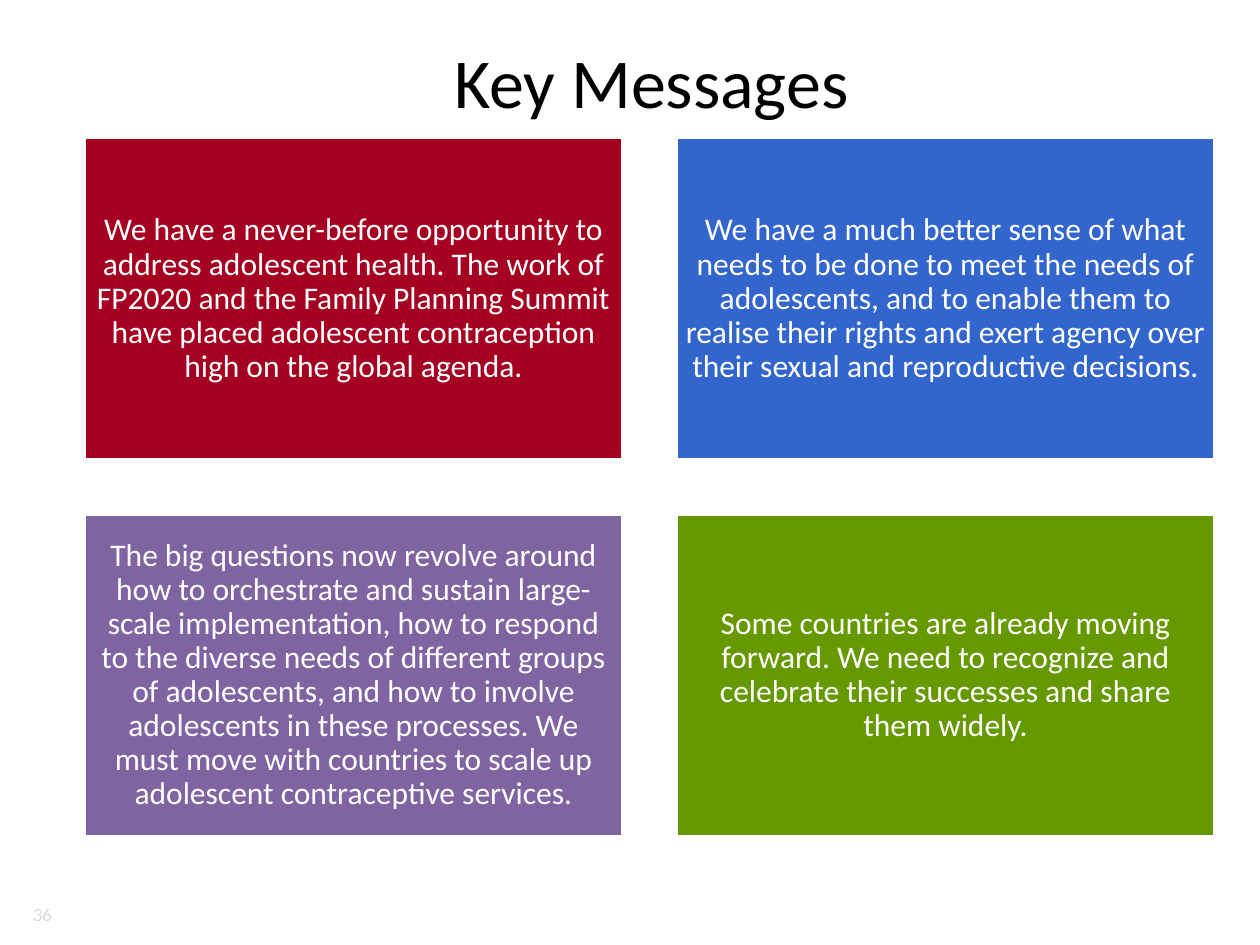
from dataclasses import dataclass

from pptx import Presentation
from pptx.dml.color import RGBColor
from pptx.enum.shapes import MSO_SHAPE as Shape
from pptx.enum.text import MSO_ANCHOR as Anchor, PP_ALIGN as Align
from pptx.util import Pt


@dataclass(frozen=True)
class Theme:
    font: str = "Calibri"
    title_size: float = 40
    card_size: float = 18
    number_size: float = 10.5
    black: str = "000000"
    white: str = "FFFFFF"
    grey: str = "D9D9D9"
    red: str = "A50021"
    blue: str = "3366CC"
    purple: str = "8064A2"
    green: str = "669900"


class SlideBuilder:
    """Draws styled elements on one slide, with lengths in points."""

    def __init__(self, slide, theme):
        self.slide = slide
        self.theme = theme

    def set_text(self, shape, text, size, color, align):
        frame = shape.text_frame
        frame.word_wrap = True
        frame.vertical_anchor = Anchor.MIDDLE
        paragraph = frame.paragraphs[0]
        paragraph.text = text
        paragraph.alignment = align
        font = paragraph.font
        font.name = self.theme.font
        font.size = Pt(size)
        font.color.rgb = RGBColor.from_string(color)
        return paragraph

    def title(self, text, left, top, width, height):
        shape = self.slide.shapes.title
        shape.left, shape.top = Pt(left), Pt(top)
        shape.width, shape.height = Pt(width), Pt(height)
        self.set_text(shape, text, self.theme.title_size, self.theme.black, Align.CENTER)

    def card(self, text, color, left, top, width, height):
        shape = self.slide.shapes.add_shape(
            Shape.RECTANGLE, Pt(left), Pt(top), Pt(width), Pt(height))
        shape.shadow.inherit = False
        shape.fill.solid()
        shape.fill.fore_color.rgb = RGBColor.from_string(color)
        shape.line.color.rgb = RGBColor.from_string(self.theme.white)
        shape.line.width = Pt(2)
        frame = shape.text_frame
        frame.margin_left = frame.margin_right = Pt(5)
        frame.margin_top = frame.margin_bottom = Pt(5)
        paragraph = self.set_text(
            shape, text, self.theme.card_size, self.theme.white, Align.CENTER)
        paragraph.line_spacing = 0.9

    def number(self, text, left, top, width, height):
        shape = self.slide.shapes.add_textbox(Pt(left), Pt(top), Pt(width), Pt(height))
        self.set_text(shape, text, self.theme.number_size, self.theme.grey, Align.RIGHT)


def main():
    theme = Theme()
    presentation = Presentation()
    presentation.slide_width, presentation.slide_height = Pt(720), Pt(540)
    slide = presentation.slides.add_slide(presentation.slide_layouts[5])
    builder = SlideBuilder(slide, theme)

    messages = [
        ("We have a never-before opportunity to address adolescent health. "
         "The work of FP2020 and the Family Planning Summit have placed "
         "adolescent contraception high on the global agenda.", theme.red),
        ("We have a much better sense of what needs to be done to meet the needs "
         "of adolescents, and to enable them to realise their rights and exert "
         "agency over their sexual and reproductive decisions.", theme.blue),
        ("The big questions now revolve around how to orchestrate and sustain "
         "large-scale implementation, how to respond to the diverse needs of "
         "different groups of adolescents, and how to involve adolescents in "
         "these processes. We must move with countries to scale up adolescent "
         "contraceptive services.", theme.purple),
        ("Some countries are already moving forward. We need to recognize and "
         "celebrate their successes and share them widely.", theme.green),
    ]
    left, top, width, height, gap = 48.3, 78.5, 307.5, 184.5, 30.8
    builder.title("Key Messages", left, 15, 648, 62.5)
    for index, (text, color) in enumerate(messages):
        row, column = divmod(index, 2)
        builder.card(text, color, left + column * (width + gap),
                     top + row * (height + gap), width, height)
    builder.number("36", 8.6, 514, 28, 17.3)
    presentation.save("out.pptx")


if __name__ == "__main__":
    main()
